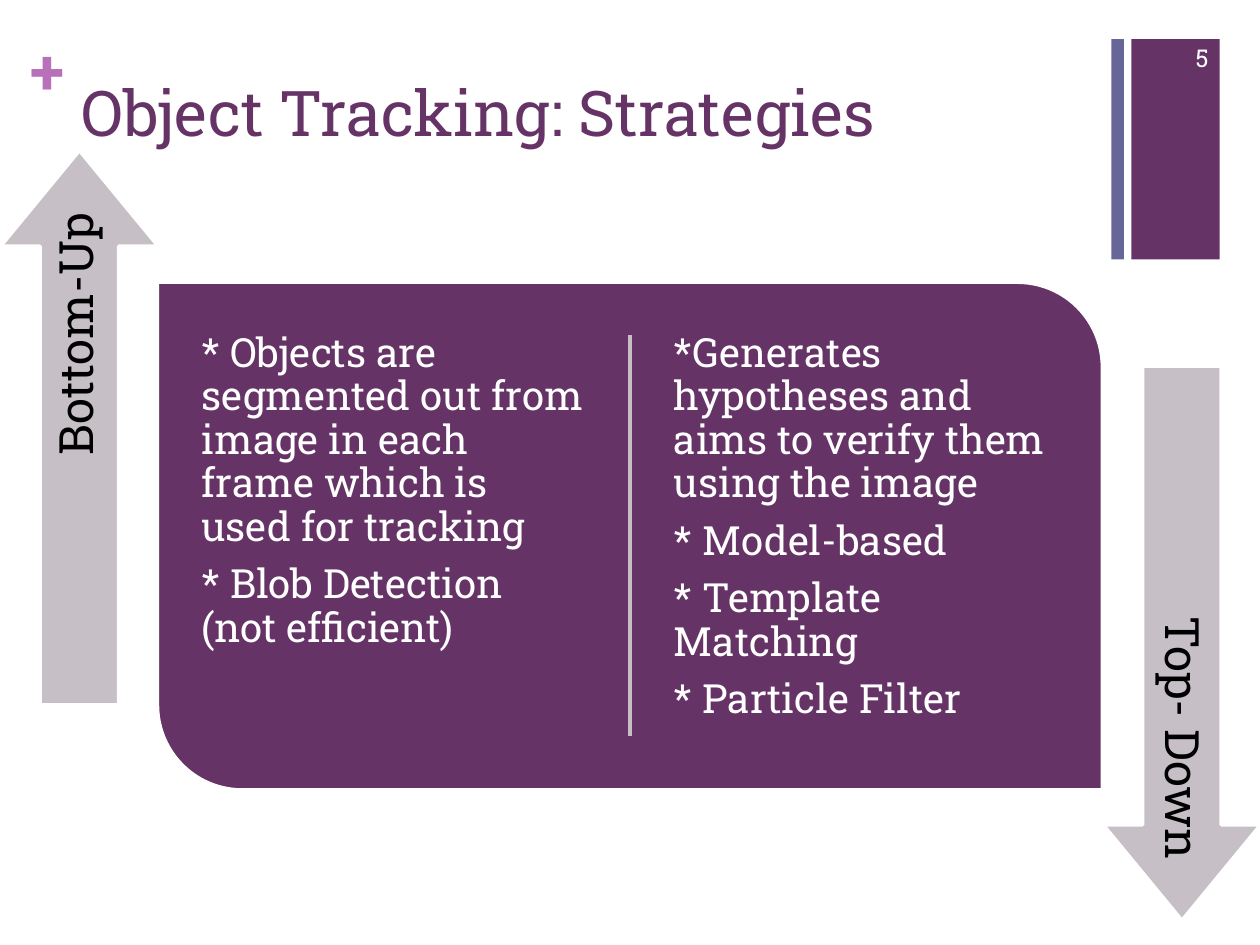
from lxml import etree
from pptx import Presentation
from pptx.dml.color import RGBColor
from pptx.enum.shapes import MSO_CONNECTOR, MSO_SHAPE
from pptx.enum.text import MSO_ANCHOR, MSO_AUTO_SIZE, PP_ALIGN
from pptx.oxml.ns import qn
from pptx.util import Inches, Pt

RECTANGLE = MSO_SHAPE.RECTANGLE
PANEL = MSO_SHAPE.ROUND_2_DIAG_RECTANGLE
ARROW = MSO_SHAPE.RIGHT_ARROW
STRAIGHT = MSO_CONNECTOR.STRAIGHT
TOP, MIDDLE = MSO_ANCHOR.TOP, MSO_ANCHOR.MIDDLE
LEFT, RIGHT = PP_ALIGN.LEFT, PP_ALIGN.RIGHT
NO_FIT = MSO_AUTO_SIZE.NONE

PURPLE = RGBColor(0x66, 0x33, 0x66)
BLUE = RGBColor(0x66, 0x66, 0x99)
ORCHID = RGBColor(0xB8, 0x70, 0xB8)
GRAY = RGBColor(0xC6, 0xBF, 0xC6)
WHITE = RGBColor(0xFF, 0xFF, 0xFF)
BLACK = RGBColor(0x00, 0x00, 0x00)
FONT = "Roboto Slab"

deck = Presentation()
deck.slide_width, deck.slide_height = Inches(10), Inches(7.5)
page = deck.slides.add_slide(deck.slide_layouts[5])


def add_block(kind, place, fill, outlined=False):
    block = page.shapes.add_shape(kind, *map(Inches, place))
    block.shadow.inherit = False
    block.fill.solid()
    block.fill.fore_color.rgb = fill
    if outlined:
        block.line.color.rgb = WHITE
        block.line.width = Pt(2)
    else:
        block.line.fill.background()
    return block


def write(box, lines, size, color, align=LEFT, anchor=TOP, inset=None, spacing=None, after=0):
    frame = box.text_frame
    frame.text = "\n".join(lines)
    frame.word_wrap = True
    frame.auto_size = NO_FIT
    frame.vertical_anchor = anchor
    if inset is not None:
        frame.margin_left = frame.margin_right = Inches(inset)
        frame.margin_top = frame.margin_bottom = Inches(inset)
    for para in frame.paragraphs:
        para.alignment = align
        para.space_before = Pt(0)
        para.space_after = Pt(after)
        if spacing:
            para.line_spacing = spacing
        for span in para.runs:
            span.font.name = FONT
            span.font.size = Pt(size)
            span.font.color.rgb = color


title = page.shapes.title
title.left, title.top = Inches(0.55), Inches(0.53)
title.width, title.height = Inches(8.26), Inches(1.22)
write(title, ["Object Tracking: Strategies"], 36, PURPLE)

add_block(RECTANGLE, (8.98, 0.31, 0.7, 1.75), PURPLE)
plus = page.shapes.add_textbox(Inches(0.24), Inches(0.25), Inches(0.29), Inches(0.61))
write(plus, ["+"], 36, ORCHID, inset=0)
plus.text_frame.paragraphs[0].runs[0].font.bold = True
add_block(RECTANGLE, (8.82, 0.31, 0.1, 1.75), BLUE)

panel = add_block(PANEL, (1.25, 2.24, 7.5, 4.03), PURPLE, outlined=True)
panel.adjustments[0] = 0
panel.adjustments[1] = 0.167

divider = page.shapes.add_connector(STRAIGHT, Inches(5), Inches(2.66), Inches(5), Inches(5.84))
divider.line.color.rgb = GRAY
divider.line.width = Pt(2)
etree.SubElement(divider._element.spPr, qn("a:effectLst"))

columns = [
    (1.5, [
        "* Objects are segmented out from image in each frame which is used for tracking",
        "* Blob Detection (not efficient)",
    ]),
    (5.25, [
        "*Generates hypotheses and aims to verify them using the image",
        "* Model-based",
        "* Template Matching",
        "* Particle Filter",
    ]),
]
for left, points in columns:
    column = page.shapes.add_textbox(Inches(left), Inches(2.54), Inches(3.25), Inches(3.42))
    write(column, points, 23, WHITE, inset=0.1, spacing=0.9, after=8)

strategies = [
    ("Bottom-Up", 270, (-1.57, 2.77), (-1.39, 3.28)),
    ("Top- Down", 90, (7.18, 4.48), (7.36, 4.61)),
]
for name, angle, arrow_corner, label_corner in strategies:
    arrow = add_block(ARROW, (*arrow_corner, 4.4, 1.25), GRAY, outlined=True)
    arrow.adjustments[0] = 0.498
    arrow.adjustments[1] = 0.607
    arrow.rotation = angle
    label = page.shapes.add_textbox(*map(Inches, (*label_corner, 4.02, 0.62)))
    label.rotation = angle
    write(label, [name], 27, BLACK, RIGHT, MIDDLE, inset=0.11, spacing=0.9)

number = page.shapes.add_textbox(Inches(9.08), Inches(0.26), Inches(0.61), Inches(0.4))
write(number, ["5"], 14, WHITE, RIGHT, MIDDLE)

deck.save("out.pptx")
